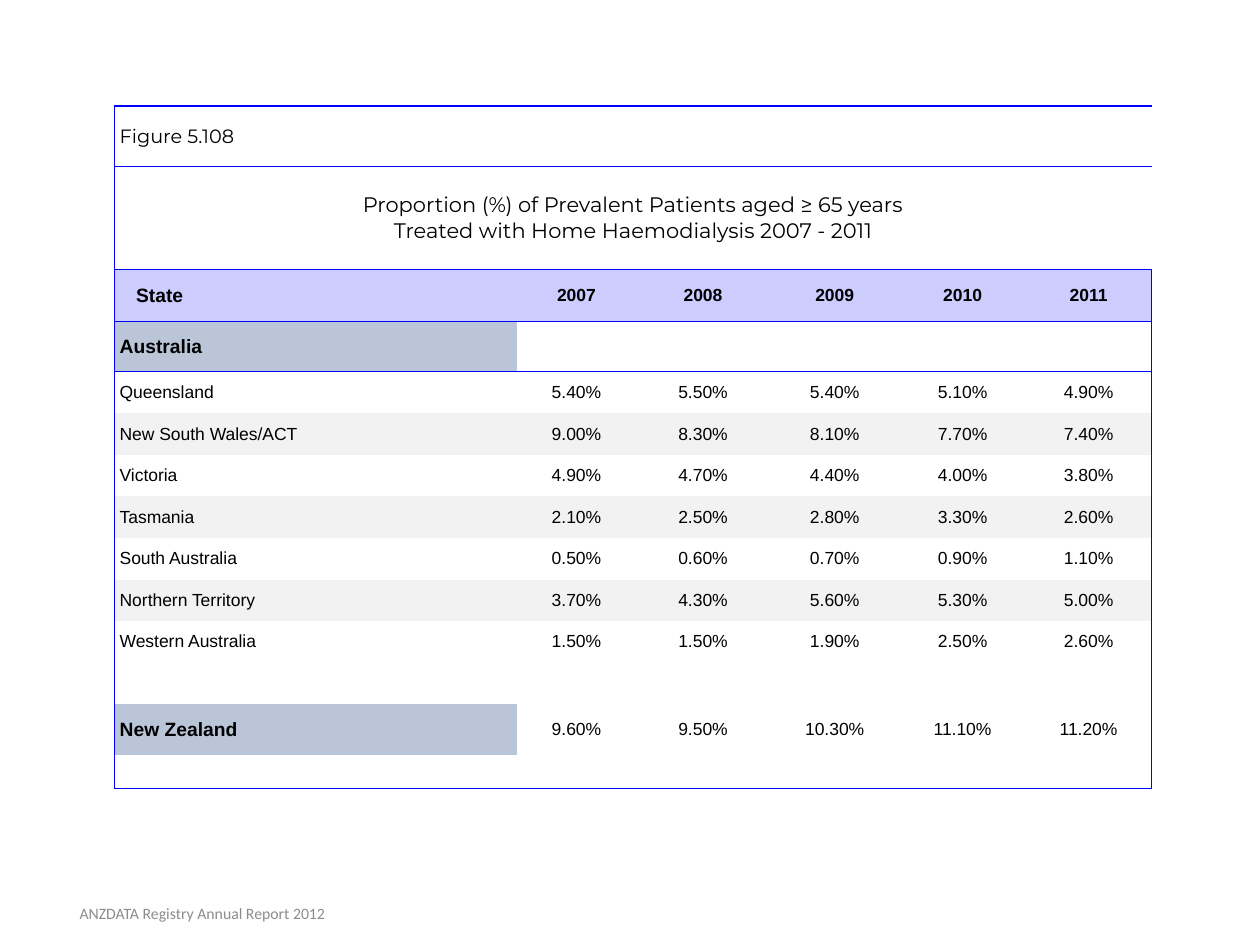
from lxml import etree
from pptx import Presentation
from pptx import util as u
from pptx.dml.color import RGBColor
from pptx.enum import text
from pptx.oxml import ns

BLUE = RGBColor(0x00, 0x00, 0xFF)
BLACK = RGBColor(0x00, 0x00, 0x00)
GREY = RGBColor(0x8C, 0x8C, 0x8C)
LILAC = RGBColor(0xCC, 0xCC, 0xFF)
STEEL = RGBColor(0xBA, 0xC6, 0xD8)
BAND = RGBColor(0xF2, 0xF2, 0xF2)

PLAIN = "{2D5ABB26-0587-4C30-8999-92F81FD0307C}"  # no style, no grid
COLS = [3.19, 0.95, 1.06, 1.03, 1, 1]
ROWS = [0.48, 0.82, 0.41, 0.4] + [0.33] * 8 + [0.4, 0.27]
HEAD, FIRST = 2, 4  # heading row, first row of data
PAD = 0.04

TITLE = ["Proportion (%) of Prevalent Patients aged ≥ 65 years",
         "Treated with Home Haemodialysis 2007 - 2011"]
DATA = [
    ["State", "2007", "2008", "2009", "2010", "2011"],
    ["Australia"],
    ["Queensland", "5.40%", "5.50%", "5.40%", "5.10%", "4.90%"],
    ["New South Wales/ACT", "9.00%", "8.30%", "8.10%", "7.70%", "7.40%"],
    ["Victoria", "4.90%", "4.70%", "4.40%", "4.00%", "3.80%"],
    ["Tasmania", "2.10%", "2.50%", "2.80%", "3.30%", "2.60%"],
    ["South Australia", "0.50%", "0.60%", "0.70%", "0.90%", "1.10%"],
    ["Northern Territory", "3.70%", "4.30%", "5.60%", "5.30%", "5.00%"],
    ["Western Australia", "1.50%", "1.50%", "1.90%", "2.50%", "2.60%"],
    [],
    ["New Zealand", "9.60%", "9.50%", "10.30%", "11.10%", "11.20%"],
    [],
]


def write(frame, lines, mid=False, after=0, **form):
    """Fill a text frame with one paragraph for each line."""
    look = {"name": "Arial", "size": u.Pt(10), "bold": False} | form
    color = look.pop("color", BLACK)
    for i, line in enumerate(lines):
        par = frame.add_paragraph() if i else frame.paragraphs[0]
        par.alignment = text.PP_ALIGN.CENTER if mid else text.PP_ALIGN.LEFT
        par.space_after = u.Pt(after)
        run = par.add_run()
        run.text = line
        for key, val in look.items():
            setattr(run.font, key, val)
        run.font.color.rgb = color


def edge(cell, side):
    """Draw a blue line on one side (L, R, T or B) of a cell."""
    props = cell._tc.get_or_add_tcPr()
    line = etree.SubElement(props, ns.qn(f"a:ln{side}"), w=str(u.Pt(1)))
    fill = etree.SubElement(line, ns.qn("a:solidFill"))
    etree.SubElement(fill, ns.qn("a:srgbClr"), val=str(BLUE))


def shade(row, col, label):
    """Choose the fill of a cell, or None."""
    if row == HEAD:
        return LILAC
    if col == 0 and label in ("Australia", "New Zealand"):
        return STEEL
    if FIRST < row < FIRST + 7 and (row - FIRST) % 2:
        return BAND
    return None


def dress(cell, row, col, tone):
    """Set the margins, borders and fill of a cell."""
    for side in ("left", "right", "top", "bottom"):
        setattr(cell, f"margin_{side}", u.Inches(PAD))
    cell.vertical_anchor = text.MSO_ANCHOR.MIDDLE
    last = len(ROWS) - 1
    sides = {"L": col == 0, "R": col == len(COLS) - 1,
             "T": row <= HEAD + 1, "B": row <= HEAD or row == last}
    for side, shown in sides.items():
        if shown:
            edge(cell, side)
    if tone is None:
        cell.fill.background()
    else:
        cell.fill.solid()
        cell.fill.fore_color.rgb = tone


def label(cell, row, col, word):
    """Write a heading, a region or a value."""
    if not word:
        # keep empty rows low
        par = cell.text_frame.paragraphs[0]._p
        etree.SubElement(par, ns.qn("a:endParaRPr"), sz="1000")
        return
    key = row == HEAD or (col == 0 and word in ("Australia", "New Zealand"))
    write(cell.text_frame, [word], mid=col > 0, after=0 if key else 14,
          bold=key, size=u.Pt(11 if key and col == 0 else 10))


def grid(slide):
    """Build the table."""
    frame = slide.shapes.add_table(
        len(ROWS), len(COLS), u.Inches(0.91), u.Inches(0.84),
        u.Inches(sum(COLS)), u.Inches(sum(ROWS)))
    table = frame.table
    table.first_row = table.horz_banding = False
    table._tbl.tblPr.find(ns.qn("a:tableStyleId")).text = PLAIN
    for col, wide in zip(table.columns, COLS):
        col.width = u.Inches(wide)
    for row, high in zip(table.rows, ROWS):
        row.height = u.Inches(high)

    # Caption and title span all columns
    for row in range(HEAD):
        table.cell(row, 0).merge(table.cell(row, len(COLS) - 1))
    write(table.cell(0, 0).text_frame, ["Figure 5.108"],
          name="Montserrat", size=u.Pt(11))
    write(table.cell(1, 0).text_frame, TITLE, mid=True,
          name="Montserrat", size=u.Pt(12))

    # Headings, regions and values
    for row in range(len(ROWS)):
        words = DATA[row - HEAD] if row >= HEAD else []
        for col in range(len(COLS)):
            cell = table.cell(row, col)
            word = words[col] if col < len(words) else ""
            dress(cell, row, col, shade(row, col, word))
            if row >= HEAD:
                label(cell, row, col, word)
    table.cell(HEAD, 0).margin_left = u.Inches(0.17)


def foot(slide):
    """Add the source line at the bottom."""
    box = slide.shapes.add_textbox(
        u.Inches(0.02), u.Inches(7.05), u.Inches(3.17), u.Inches(0.4))
    frame = box.text_frame
    frame.word_wrap = True
    frame.vertical_anchor = text.MSO_ANCHOR.MIDDLE
    write(frame, ["ANZDATA Registry Annual Report 2012"], mid=True,
          name="Calibri", size=u.Pt(9), color=GREY)


def main():
    deck = Presentation()
    deck.slide_width, deck.slide_height = u.Inches(10), u.Inches(7.5)
    slide = deck.slides.add_slide(deck.slide_layouts[6])
    grid(slide)
    foot(slide)
    deck.save("out.pptx")


if __name__ == "__main__":
    main()
